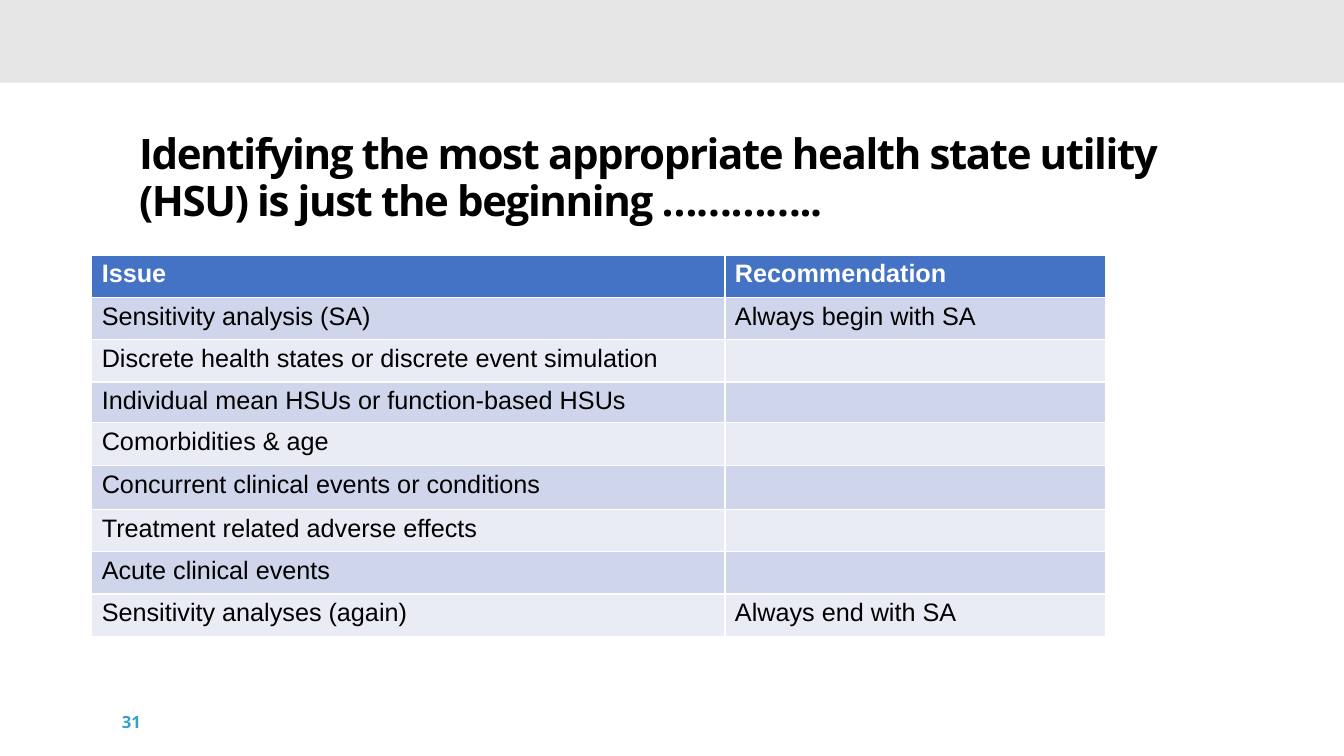
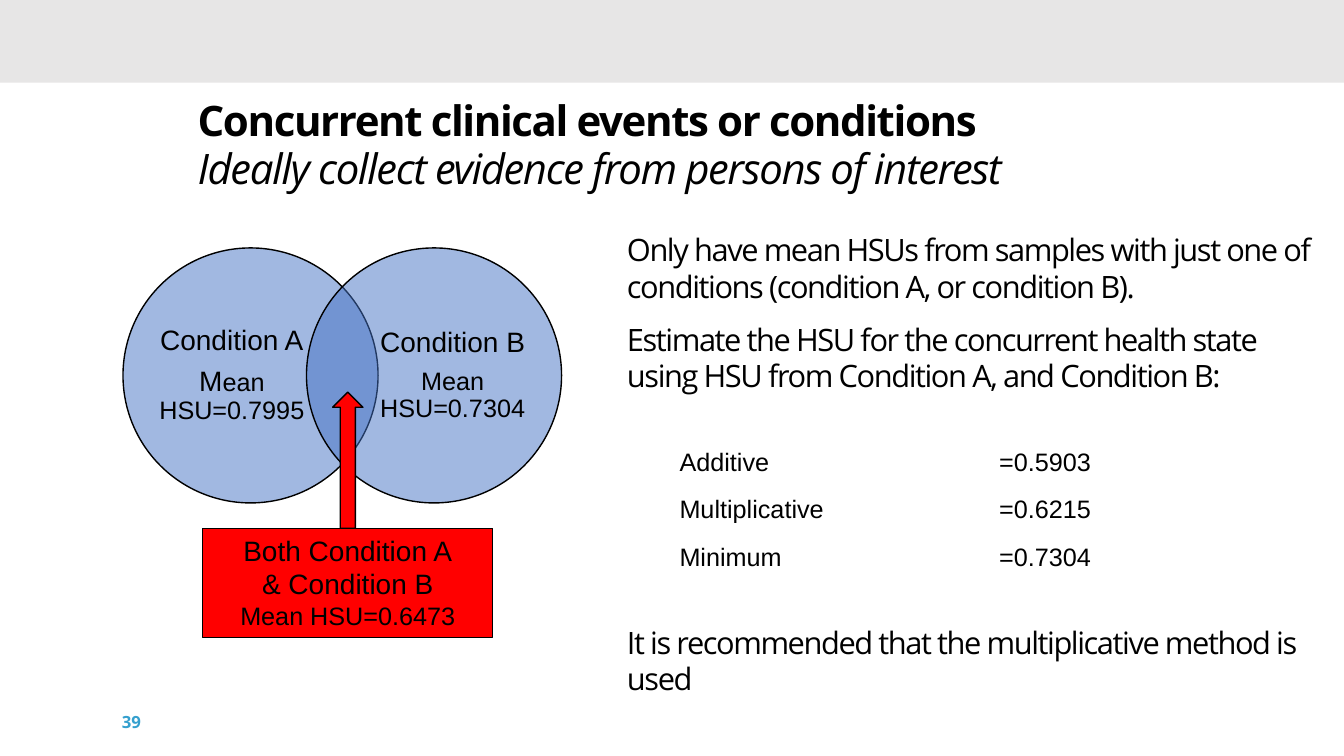
"""Build two slides on choosing and combining health state utilities."""
from lxml import etree
from pptx import Presentation
from pptx.dml.color import RGBColor
from pptx.enum.shapes import MSO_SHAPE
from pptx.enum.text import MSO_ANCHOR, MSO_AUTO_SIZE, PP_ALIGN
from pptx.oxml.ns import qn
from pptx.util import Inches, Pt

LEFT, CENTER = PP_ALIGN.LEFT, PP_ALIGN.CENTER
TOP, MIDDLE, BOTTOM = MSO_ANCHOR.TOP, MSO_ANCHOR.MIDDLE, MSO_ANCHOR.BOTTOM
NO_FIT = MSO_AUTO_SIZE.NONE
RECTANGLE, OVAL, UP_ARROW = MSO_SHAPE.RECTANGLE, MSO_SHAPE.OVAL, MSO_SHAPE.UP_ARROW

BLACK = RGBColor(0x00, 0x00, 0x00)
WHITE = RGBColor(0xFF, 0xFF, 0xFF)
RED = RGBColor(0xFF, 0x00, 0x00)
BLUE = RGBColor(0x44, 0x72, 0xC4)
SKY = RGBColor(0x35, 0xA0, 0xCE)
GREY = RGBColor(0xE7, 0xE6, 0xE6)
STRIPES = (RGBColor(0xE9, 0xEB, 0xF5), RGBColor(0xCF, 0xD5, 0xEA))

WIDTH, HEIGHT = 13.33, 7.5
BAND_HEIGHT = 0.82
NUMBER_AREA = (1.11, 6.96, 1.08, 0.4)

TITLE = {"name": "Open Sans", "size": Pt(30), "bold": True, "color": BLACK, "spacing": -100}
SUBTITLE = TITLE | {"bold": False, "italic": True}
BODY = TITLE | {"size": Pt(22), "bold": False}
NUMBER = {"name": "Open Sans", "size": Pt(12), "bold": True, "color": SKY}
LARGE = {"name": "Arial", "size": Pt(20), "bold": False, "color": BLACK}
SMALL = LARGE | {"size": Pt(18)}
HEADER = SMALL | {"bold": True, "color": WHITE}

TITLE_LINES = {"line_spacing": Pt(34), "alignment": LEFT}
BODY_LINES = {"line_spacing": Pt(26), "space_after": Pt(12)}
LABEL_LINES = {"line_spacing": 0.9, "space_after": Pt(7.5), "alignment": CENTER}
CENTERED = {"alignment": CENTER}
NO_MARGINS = dict.fromkeys(("margin_left", "margin_top", "margin_right", "margin_bottom"), 0)
TIGHT = dict.fromkeys(("margin_left", "margin_top", "margin_right"), Inches(0.01)) | {
    "margin_bottom": 0, "vertical_anchor": BOTTOM}

ISSUES = [
    ("Issue", "Recommendation"),
    ("Sensitivity analysis (SA)", "Always begin with SA"),
    ("Discrete health states or discrete event simulation", ""),
    ("Individual mean HSUs or function-based HSUs", ""),
    ("Comorbidities & age", ""),
    ("Concurrent clinical events or conditions", ""),
    ("Treatment related adverse effects", ""),
    ("Acute clinical events", ""),
    ("Sensitivity analyses (again)", "Always end with SA"),
]
ISSUE_COLUMNS = (6.28, 3.78)
ISSUE_ROWS = (0.42, 0.42, 0.42, 0.38, 0.42, 0.44, 0.42, 0.42, 0.42)

ESTIMATES = [("Additive", "=0.5903"), ("Multiplicative", "=0.6215"), ("Minimum", "=0.7304")]
ESTIMATE_COLUMNS = (2.68, 1.91)
ESTIMATE_ROWS = (0.47,) * len(ESTIMATES)

ISSUE_TITLE = [[("Identifying the most appropriate health state utility (HSU) "
                 "is just the beginning …………..", TITLE)]]
CONDITION_TITLE = [
    [("Concurrent clinical events or conditions", TITLE)],
    [("Ideally collect evidence from persons of interest", SUBTITLE)],
]
PROBLEM = [
    [("Only have mean HSUs from samples with just one of conditions "
      "(condition A, or condition B).", BODY)],
    [("Estimate the HSU for the concurrent health state using HSU from "
      "Condition A, and Condition B:", BODY)],
]
ADVICE = [[("It is recommended that the multiplicative method is used", BODY)]]
CONDITIONS = [
    (1.22, 1.57, [[("Condition A", LARGE)], [("M", LARGE), ("ean HSU=0.7995", SMALL)]]),
    (3.04, 3.76, [[("Condition B", LARGE)], [("Mean HSU=0.7304", SMALL)]]),
]
BOTH = [
    [("Both Condition A", LARGE)],
    [("& Condition B", LARGE)],
    [("Mean HSU=0.6473", SMALL)],
]
CIRCLE_TOP, CIRCLE_SIZE = 2.46, 2.53
LABEL_TOP, LABEL_SIZE = 2.76, (1.46, 1.93)
BOTH_AREA = (2.01, 5.24, 2.88, 1.08)
ARROW_SIZE = (0.3, 1.35)
TEXT_LEFT, TEXT_WIDTH = 6.12, 7.05


def apply(target, values):
    """Set every attribute named in a dict of format values."""
    for name, value in values.items():
        setattr(target, name, value)


def write(frame, paragraphs, lines, **settings):
    """Fill a text frame with paragraphs made of styled spans."""
    apply(frame, {"word_wrap": True, "auto_size": NO_FIT} | settings)
    for index, spans in enumerate(paragraphs):
        para = frame.add_paragraph() if index else frame.paragraphs[0]
        apply(para, lines)
        for text, style in spans:
            span = para.add_run()
            span.text = text
            for name, value in style.items():
                if name == "color":
                    span.font.color.rgb = value
                elif name == "spacing":
                    span._r.get_or_add_rPr().set("spc", str(value))
                else:
                    setattr(span.font, name, value)


def add_text(page, area, paragraphs, lines, **settings):
    """Add a wrapped text box."""
    box = page.shapes.add_textbox(*map(Inches, area))
    write(box.text_frame, paragraphs, lines, **settings)


def add_figure(page, kind, area, color, line_width=0, opacity=100):
    """Add a flat preset shape, outlined in black when a line width is given."""
    figure = page.shapes.add_shape(kind, *map(Inches, area))
    figure.shadow.inherit = False
    figure.fill.solid()
    figure.fill.fore_color.rgb = color
    if opacity < 100:
        tone = figure._element.spPr.find(qn("a:solidFill"))[0]
        etree.SubElement(tone, qn("a:alpha")).set("val", str(opacity * 1000))
    if line_width:
        figure.line.color.rgb = BLACK
        figure.line.width = Pt(line_width)
    else:
        figure.line.fill.background()
    return figure


def add_grid(page, corner, columns, rows):
    """Add a table with the given column widths and row heights."""
    area = (*corner, sum(columns), sum(rows))
    table = page.shapes.add_table(len(rows), len(columns), *map(Inches, area)).table
    for column, width in zip(table.columns, columns):
        column.width = Inches(width)
    for row, height in zip(table.rows, rows):
        row.height = Inches(height)
    return table


def add_page(deck, title, area, number):
    """Add a slide with the shared band, title and page number."""
    page = deck.slides.add_slide(deck.slide_layouts[5])
    add_figure(page, RECTANGLE, (0, 0, WIDTH, BAND_HEIGHT), GREY)
    heading = page.shapes.title
    apply(heading, dict(zip(("left", "top", "width", "height"), map(Inches, area))))
    write(heading.text_frame, title, TITLE_LINES, vertical_anchor=TOP)
    add_text(page, NUMBER_AREA, [[(number, NUMBER)]], {}, vertical_anchor=MIDDLE)
    return page


def build_issues(deck):
    """Build the slide listing issues and recommendations."""
    page = add_page(deck, ISSUE_TITLE, (1.28, 1.24, 11.45, 1.19), "31")
    table = add_grid(page, (0.91, 2.53), ISSUE_COLUMNS, ISSUE_ROWS)
    for row, texts in enumerate(ISSUES):
        for column, text in enumerate(texts):
            cell = table.cell(row, column)
            cell.fill.solid()
            cell.fill.fore_color.rgb = STRIPES[row % 2] if row else BLUE
            if text:
                write(cell.text_frame, [[(text, SMALL if row else HEADER)]], {})


def build_conditions(deck):
    """Build the slide comparing estimates for two concurrent conditions."""
    page = add_page(deck, CONDITION_TITLE, (1.86, 0.92, 10.18, 1.01), "39")
    add_text(page, (TEXT_LEFT, 2.25, TEXT_WIDTH, 1.9), PROBLEM, BODY_LINES)
    add_text(page, (TEXT_LEFT, 6.14, TEXT_WIDTH, 1.04), ADVICE, BODY_LINES)

    for circle_left, label_left, label in CONDITIONS:
        circle = (circle_left, CIRCLE_TOP, CIRCLE_SIZE, CIRCLE_SIZE)
        add_figure(page, OVAL, circle, BLUE, 1, 50)
        add_text(page, (label_left, LABEL_TOP, *LABEL_SIZE), label, LABEL_LINES,
                 vertical_anchor=MIDDLE, **NO_MARGINS)

    both = add_figure(page, RECTANGLE, BOTH_AREA, RED, 0.75)
    write(both.text_frame, BOTH, CENTERED, vertical_anchor=TOP)
    left, top, width, _ = BOTH_AREA
    arrow_width, arrow_height = ARROW_SIZE
    corner = (left + (width - arrow_width) / 2, top - arrow_height)
    add_figure(page, UP_ARROW, (*corner, *ARROW_SIZE), RED, 1)

    table = add_grid(page, (6.73, 4.26), ESTIMATE_COLUMNS, ESTIMATE_ROWS)
    apply(table, {"first_row": False, "horz_banding": False})
    for row, texts in enumerate(ESTIMATES):
        for column, text in enumerate(texts):
            cell = table.cell(row, column)
            cell.fill.background()
            apply(cell, TIGHT)
            write(cell.text_frame, [[(text, SMALL)]], CENTERED if column else {})


def main():
    """Create and save the deck."""
    deck = Presentation()
    deck.slide_width, deck.slide_height = Inches(WIDTH), Inches(HEIGHT)
    build_issues(deck)
    build_conditions(deck)
    deck.save("out.pptx")


if __name__ == "__main__":
    main()
